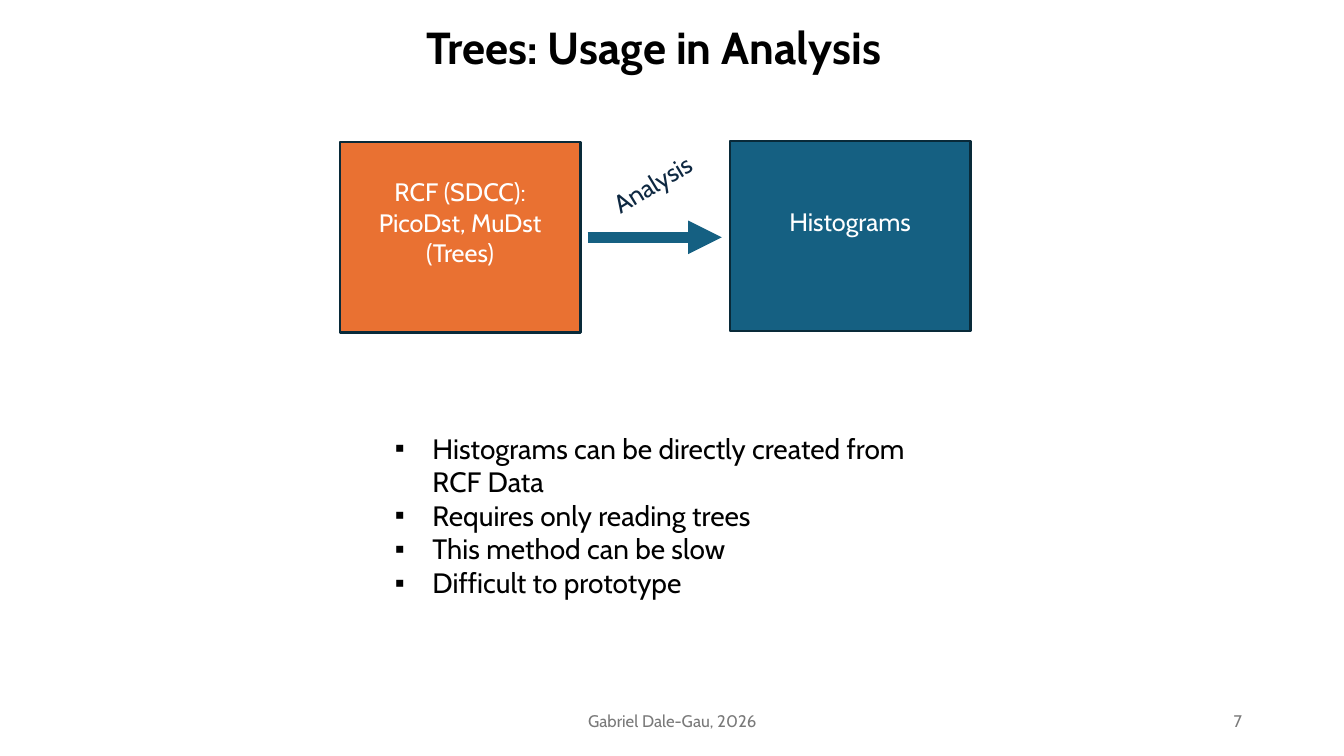
"""Build the slide on using trees in an analysis."""
from lxml import etree
from pptx import Presentation, util as u
from pptx.dml.color import RGBColor
from pptx.enum import shapes, text
from pptx.oxml.ns import qn

COLOURS = {"black": "000000", "white": "FFFFFF", "orange": "E97132",
           "blue": "156082", "outline": "092A39", "navy": "0E2841", "grey": "797979"}
FONT = "Cabin"


def colour(key):
    return RGBColor.from_string(COLOURS[key])


def write(frame, lines, size, ink, align=text.PP_ALIGN.LEFT,
          anchor=text.MSO_ANCHOR.TOP, bold=False):
    frame.word_wrap = True
    frame.vertical_anchor = anchor
    frame.text = "\n".join(lines)
    for paragraph in frame.paragraphs:
        paragraph.alignment = align
        paragraph.font.name = FONT
        paragraph.font.size = u.Pt(size)
        paragraph.font.bold = bold
        paragraph.font.color.rgb = colour(ink)


deck = Presentation()
deck.slide_width, deck.slide_height = u.Cm(33.87), u.Cm(19.05)
slide = deck.slides.add_slide(deck.slide_layouts[5])

title = slide.shapes.title
title.left, title.top, title.width, title.height = u.Cm(10.49), u.Cm(0.36), u.Cm(12.88), u.Cm(1.63)
title.text_frame.auto_size = text.MSO_AUTO_SIZE.NONE
write(title.text_frame, ["Trees: Usage in Analysis"], 32, "black", bold=True)

stages = [
    (8.56, 3.58, "orange", ["RCF (SDCC):", "PicoDst, MuDst", "(Trees)"]),
    (18.39, 3.55, "blue", ["Histograms"]),
]
for left, top, fill, lines in stages:
    stage = slide.shapes.add_shape(shapes.MSO_SHAPE.RECTANGLE,
                                   u.Cm(left), u.Cm(top), u.Cm(6.07), u.Cm(4.8))
    stage.shadow.inherit = False
    stage.fill.solid()
    stage.fill.fore_color.rgb = colour(fill)
    stage.line.color.rgb = colour("outline")
    stage.line.width = u.Pt(1.5)
    stage.text_frame.margin_bottom = u.Cm(0.89)
    write(stage.text_frame, lines, 18, "white", text.PP_ALIGN.CENTER, text.MSO_ANCHOR.MIDDLE)

arrow = slide.shapes.add_connector(shapes.MSO_CONNECTOR.STRAIGHT,
                                   u.Cm(14.81), u.Cm(5.98), u.Cm(18.19), u.Cm(5.98))
arrow.line.color.rgb = colour("blue")
arrow.line.width = u.Pt(8)
etree.SubElement(arrow.line._get_or_add_ln(), qn("a:tailEnd"), type="triangle")
etree.SubElement(arrow._element.spPr, qn("a:effectLst"))

step = slide.shapes.add_textbox(u.Cm(15.09), u.Cm(4.09), u.Cm(2.82), u.Cm(1.02))
step.rotation = 328.7
write(step.text_frame, ["Analysis"], 18, "navy")

remarks = slide.shapes.add_textbox(u.Cm(9.7), u.Cm(10.74), u.Cm(14.45), u.Cm(4.5))
remarks.text_frame.text = "\n".join([
    "Histograms can be directly created from RCF Data",
    "Requires only reading trees",
    "This method can be slow",
    "Difficult to prototype",
])
remarks.text_frame.word_wrap = True
for remark in remarks.text_frame.paragraphs:
    properties = remark._p.get_or_add_pPr()
    properties.set("marL", str(u.Cm(0.95)))
    properties.set("indent", str(u.Cm(-0.95)))
    etree.SubElement(properties, qn("a:buFont"), typeface="Wingdings")
    etree.SubElement(properties, qn("a:buChar"), char="▪")
    properties.find(qn("a:buFont")).set("typeface", "Arial")
    remark.font.name = FONT
    remark.font.size = u.Pt(20)
    remark.font.color.rgb = colour("black")

footers = [
    (11.23, 11.43, "Gabriel Dale-Gau, 2026", text.PP_ALIGN.CENTER),
    (23.93, 7.62, "7", text.PP_ALIGN.RIGHT),
]
for left, width, words, align in footers:
    footer = slide.shapes.add_textbox(u.Cm(left), u.Cm(17.65), u.Cm(width), u.Cm(1.02))
    write(footer.text_frame, [words], 12, "grey", align, text.MSO_ANCHOR.MIDDLE)

deck.save("out.pptx")
